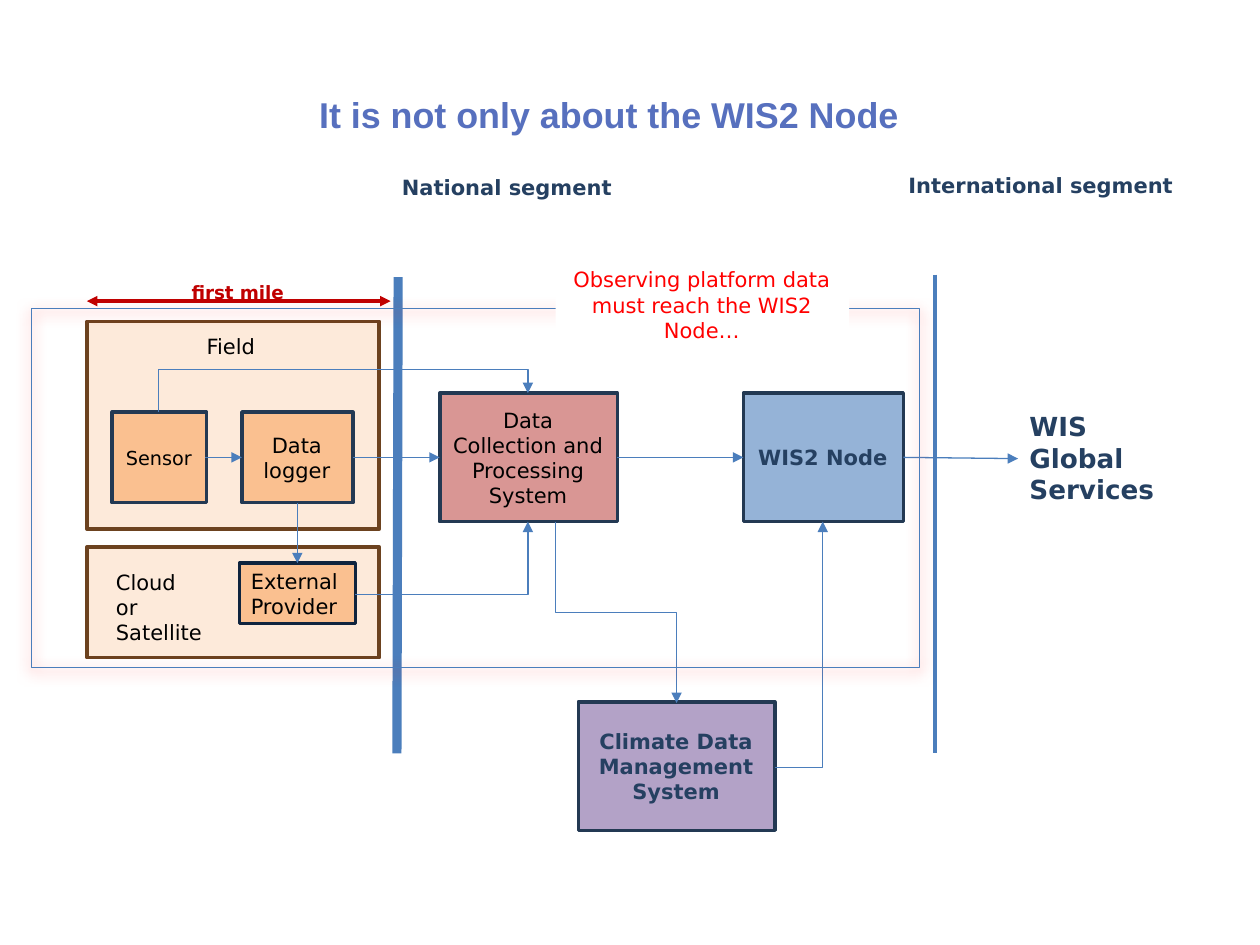
from lxml import etree
from pptx import Presentation
from pptx.dml.color import RGBColor
from pptx.enum.shapes import MSO_CONNECTOR, MSO_SHAPE
from pptx.enum.text import MSO_ANCHOR, PP_ALIGN
from pptx.oxml import parse_xml
from pptx.oxml.ns import nsdecls, qn
from pptx.util import Inches, Pt

RECTANGLE = MSO_SHAPE.RECTANGLE
STRAIGHT, ELBOW = MSO_CONNECTOR.STRAIGHT, MSO_CONNECTOR.ELBOW
LEFT, CENTER = PP_ALIGN.LEFT, PP_ALIGN.CENTER
TOP, MIDDLE = MSO_ANCHOR.TOP, MSO_ANCHOR.MIDDLE
COLORS = {
    "panel": "FDEADA", "brown": "6C421F", "orange": "FAC090",
    "rose": "D99694", "sky": "95B3D7", "violet": "B3A2C7",
    "edge": "233953", "dark_edge": "0F243E", "flow": "4B7EBC",
    "navy": "254061", "title": "5770BE", "crimson": "C00000",
    "red": "FF0000", "white": "FFFFFF", "black": "000000",
}


def write_text(box, text, size, color, bold=False, align=LEFT, anchor=TOP, font="DejaVu Sans"):
    frame = box.text_frame
    frame.word_wrap = True
    frame.vertical_anchor = anchor
    frame.margin_left, frame.margin_right = Inches(0.09), Inches(0.1)
    frame.margin_top = frame.margin_bottom = Inches(0.05)
    frame.text = text
    for para in frame.paragraphs:
        para.alignment = align
        for span in para.runs:
            span.font.name = font
            span.font.size = Pt(size)
            span.font.bold = bold
            span.font.color.rgb = RGBColor.from_string(COLORS[color])


def style_line(connector, color, width, ends=()):
    connector.line.color.rgb = RGBColor.from_string(COLORS[color])
    connector.line.width = Pt(width)
    properties = connector._element.spPr
    for end in ends:
        etree.SubElement(properties.find(qn("a:ln")), qn("a:" + end), type="triangle")
    etree.SubElement(properties, qn("a:effectLst"))


deck = Presentation()
deck.slide_width, deck.slide_height = Inches(10), Inches(7.5)
page = deck.slides.add_slide(deck.slide_layouts[6])

blocks = [
    ((0.69, 4.34, 2.32, 0.88), "panel", "brown", None),
    ((0.69, 2.55, 2.32, 1.65), "panel", "brown", None),
    ((0.89, 3.27, 0.75, 0.72), "orange", "edge", ("Sensor", 11, "black", False, CENTER)),
    ((1.92, 3.27, 0.88, 0.72), "orange", "edge", ("Data logger", 12, "black", False, CENTER)),
    ((3.49, 3.12, 1.41, 1.02), "rose", "edge",
     ("Data Collection and Processing System", 12, "black", False, CENTER)),
    ((5.9, 3.12, 1.27, 1.02), "sky", "edge", ("WIS2 Node", 12, "navy", True, CENTER)),
    ((1.9, 4.47, 0.92, 0.48), "orange", "dark_edge",
     ("External\nProvider", 12, "black", False, LEFT)),
    ((4.59, 5.57, 1.56, 1.02), "violet", "edge",
     ("Climate Data Management System", 12, "navy", True, CENTER)),
]
for place, fill, edge, label in blocks:
    block = page.shapes.add_shape(RECTANGLE, *map(Inches, place))
    block.shadow.inherit = False
    block.fill.solid()
    block.fill.fore_color.rgb = RGBColor.from_string(COLORS[fill])
    block.line.color.rgb = RGBColor.from_string(COLORS[edge])
    block.line.width = Pt(2)
    if label:
        write_text(block, *label, anchor=MIDDLE)

straight_lines = [
    ((1.63, 3.63, 1.92, 3.63), "flow", 0.75, ["tailEnd"]),
    ((2.8, 3.63, 3.49, 3.63), "flow", 0.75, ["tailEnd"]),
    ((4.9, 3.63, 5.9, 3.63), "flow", 0.75, ["tailEnd"]),
    ((7.17, 3.63, 8.08, 3.64), "flow", 0.75, ["tailEnd"]),
    ((2.36, 3.99, 2.36, 4.47), "flow", 0.75, ["tailEnd"]),
    ((3.16, 2.2, 3.15, 5.98), "flow", 5.25, []),
    ((7.42, 2.18, 7.42, 5.98), "flow", 2, []),
    ((0.69, 2.39, 3.1, 2.39), "crimson", 2, ["headEnd", "tailEnd"]),
]
for ends, color, width, arrows in straight_lines:
    connector = page.shapes.add_connector(STRAIGHT, *map(Inches, ends))
    style_line(connector, color, width, arrows)

elbows = [
    ((2.82, 4.14, 1.37, 0.58), 0, ["flipV"], "bentConnector2", None),
    ((2.65, 1.73, 0.15, 2.93), 90, ["flipH", "flipV"], "bentConnector3", 226100),
    ((4.17, 4.38, 1.44, 0.96), 270, ["flipH"], "bentConnector3", 50000),
    ((6.15, 4.14, 0.38, 1.95), 0, ["flipV"], "bentConnector2", None),
]
for (left, top, width, height), turn, flips, preset, bend in elbows:
    ends = (left, top, left + width, top + height)
    connector = page.shapes.add_connector(ELBOW, *map(Inches, ends))
    style_line(connector, "flow", 0.75, ["tailEnd"])
    properties = connector._element.spPr
    transform = properties.find(qn("a:xfrm"))
    transform.set("rot", str(turn * 60000))
    for flip in flips:
        transform.set(flip, "1")
    geometry = properties.find(qn("a:prstGeom"))
    geometry.set("prst", preset)
    if bend:
        guides = geometry.find(qn("a:avLst"))
        etree.SubElement(guides, qn("a:gd"), name="adj1", fmla=f"val {bend}")

frame_box = page.shapes.add_shape(RECTANGLE, *map(Inches, (0.25, 2.45, 7.05, 2.85)))
frame_box.fill.background()
frame_box.line.color.rgb = RGBColor.from_string(COLORS["flow"])
frame_box.line.width = Pt(0.75)
frame_box._element.spPr.append(parse_xml(
    f'<a:effectLst {nsdecls("a")}>'
    f'<a:outerShdw blurRad="{Pt(8.6)}" dist="{Pt(1.8)}" dir="5400000" rotWithShape="0">'
    f'<a:srgbClr val="{COLORS["red"]}"><a:alpha val="68000"/></a:srgbClr>'
    '</a:outerShdw></a:effectLst>'))

labels = [
    ((1.55, 2.6, 0.64, 0.33), "Field", 12, "black", False),
    ((3.1, 1.34, 1.87, 0.3), "National segment", 12, "navy", True),
    ((7.12, 1.32, 2.33, 0.3), "International segment", 12, "navy", True),
    ((1.43, 2.18, 0.95, 0.28), "first mile", 10.5, "crimson", True),
    ((0.83, 4.47, 0.88, 0.71), "Cloud or Satellite", 12, "black", False),
    ((8.08, 3.21, 1.24, 0.86), "WIS\nGlobal Services", 15, "navy", True),
]
for place, *label in labels:
    write_text(page.shapes.add_textbox(*map(Inches, place)), *label)

title = page.shapes.add_textbox(*map(Inches, (1.03, 0.56, 7.62, 0.69)))
write_text(title, "It is not only about the WIS2 Node", 20.5, "title", True, CENTER, MIDDLE, "Arial")

caption = page.shapes.add_shape(RECTANGLE, *map(Inches, (4.41, 2.07, 2.33, 0.73)))
caption.shadow.inherit = False
caption.fill.solid()
caption.fill.fore_color.rgb = RGBColor.from_string(COLORS["white"])
caption.line.fill.background()
write_text(caption, "Observing platform data must reach the WIS2 Node…", 12, "red", align=CENTER)

deck.save("out.pptx")
